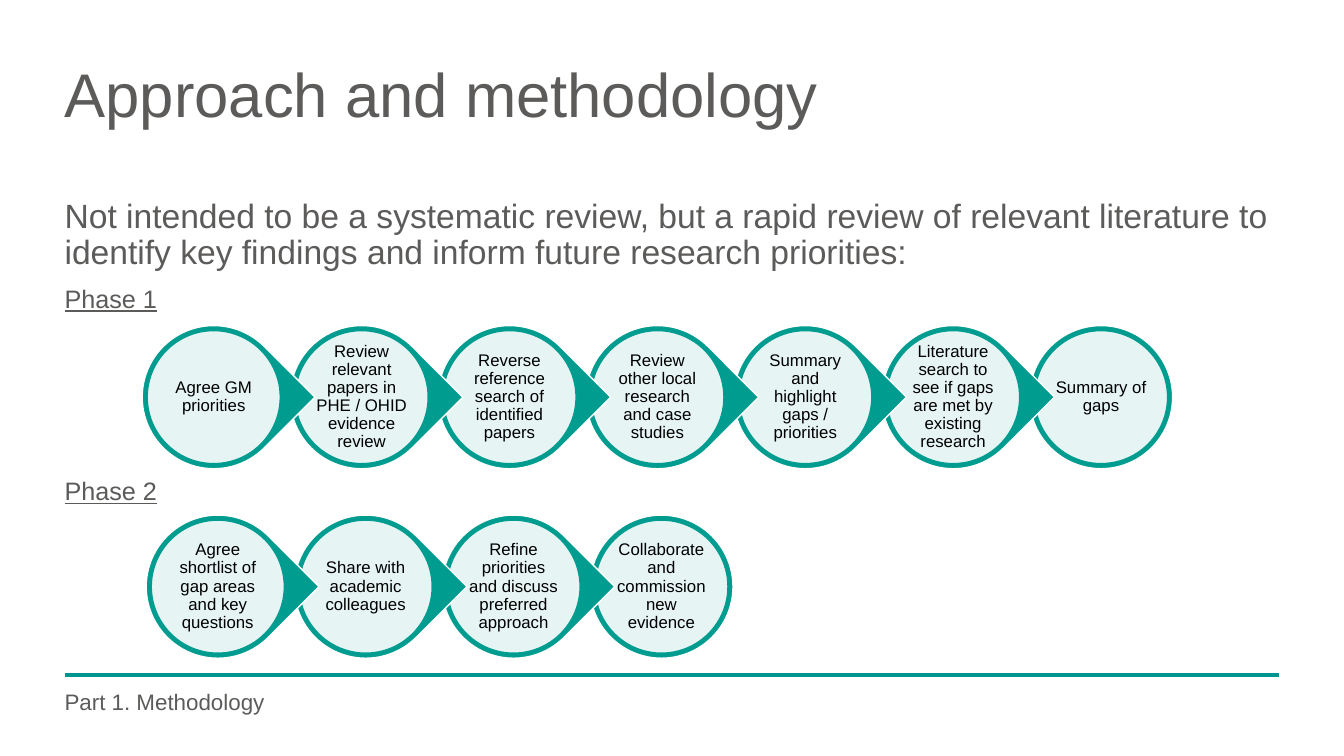
from pptx import Presentation
from pptx.dml.color import RGBColor
from pptx.enum.shapes import MSO_CONNECTOR, MSO_SHAPE
from pptx.enum.text import MSO_ANCHOR, PP_ALIGN
from pptx.oxml.ns import qn
from pptx.util import Emu, Pt
from lxml import etree

# Content
TITLE = "Approach and methodology"
INTRO = ("Not intended to be a systematic review, but a rapid review of relevant "
         "literature to identify key findings and inform future research priorities:")
FOOTER = "Part 1. Methodology"
PHASES = [
    {"label": "Phase 1", "label_top": 284, "left": 141, "top": 323, "steps": [
        "Agree GM priorities",
        "Review relevant papers in PHE / OHID evidence review",
        "Reverse reference search of identified papers",
        "Review other local research and case studies",
        "Summary and highlight gaps / priorities",
        "Literature search to see if gaps are met by existing research",
        "Summary of gaps",
    ]},
    {"label": "Phase 2", "label_top": 475, "left": 145, "top": 511, "steps": [
        "Agree shortlist of gap areas and key questions",
        "Share with academic colleagues",
        "Refine priorities and discuss preferred approach",
        "Collaborate and commission new evidence",
    ]},
]

# Style and layout, in px (100 to the inch)
PX = 9144
SLIDE_WIDTH, SLIDE_HEIGHT = 1333, 750
MARGIN, CONTENT_WIDTH = 64, 1205
RULE_TOP = 670
STEP_PITCH = 146.67
OUTER, INNER, LABEL = 142, 132, 95
FONT = "Arial"
GREY = RGBColor(0x5C, 0x5B, 0x5A)
BLACK = RGBColor(0x00, 0x00, 0x00)
WHITE = RGBColor(0xFF, 0xFF, 0xFF)
TEAL = RGBColor(0x00, 0x9C, 0x90)
RULE_TEAL = RGBColor(0x00, 0x96, 0x90)
ELLIPSE, TEARDROP = MSO_SHAPE.OVAL, MSO_SHAPE.TEAR
STRAIGHT = MSO_CONNECTOR.STRAIGHT
TOP, MIDDLE = MSO_ANCHOR.TOP, MSO_ANCHOR.MIDDLE
LEFT, CENTER = PP_ALIGN.LEFT, PP_ALIGN.CENTER


def px(value):
    return Emu(round(value * PX))


def add_text(shapes, text, left, top, width, height, size, color=GREY,
             align=LEFT, anchor=TOP, inset=0, underline=None):
    box = shapes.add_textbox(px(left), px(top), px(width), px(height))
    frame = box.text_frame
    frame.word_wrap = True
    frame.vertical_anchor = anchor
    frame.margin_left = frame.margin_right = px(inset)
    frame.margin_top = frame.margin_bottom = px(inset)
    paragraph = frame.paragraphs[0]
    paragraph.alignment = align
    paragraph.line_spacing = 0.9
    run = paragraph.add_run()
    run.text = text
    run.font.name = FONT
    run.font.size = Pt(size)
    run.font.color.rgb = color
    run.font.underline = underline


def add_disc(shapes, kind, left, top, size, fill, line):
    disc = shapes.add_shape(kind, px(left), px(top), px(size), px(size))
    disc.shadow.inherit = False
    disc.fill.solid()
    disc.fill.fore_color.rgb = fill
    disc.line.color.rgb = line
    disc.line.width = Pt(1)
    return disc


def add_step(shapes, text, left, top, is_last):
    # Teal backing: pointed towards the next step, round on the last one
    kind = ELLIPSE if is_last else TEARDROP
    backing = add_disc(shapes, kind, left, top, OUTER, TEAL, WHITE)
    if not is_last:
        backing.adjustments[0] = 1
        backing.rotation = 45

    # Pale face, 90% opaque
    offset = (OUTER - INNER) / 2
    face = add_disc(shapes, ELLIPSE, left + offset, top + offset, INNER, WHITE, TEAL)
    color = face.fill._xPr.find(qn("a:solidFill"))[0]
    etree.SubElement(color, qn("a:alpha")).set("val", "90000")

    # Wording
    offset = (OUTER - LABEL) / 2
    add_text(shapes, text, left + offset, top + offset, LABEL, LABEL, 12,
             BLACK, CENTER, MIDDLE, inset=2)


def add_phase(slide, phase):
    add_text(slide.shapes, phase["label"], MARGIN, phase["label_top"],
             CONTENT_WIDTH, 30, 18, underline=True)
    group = slide.shapes.add_group_shape()
    last = len(phase["steps"]) - 1
    # The last step lies at the back, so each point overlaps the next step
    for index in range(last, -1, -1):
        add_step(group.shapes, phase["steps"][index],
                 phase["left"] + index * STEP_PITCH, phase["top"], index == last)


def main():
    presentation = Presentation()
    presentation.slide_width = px(SLIDE_WIDTH)
    presentation.slide_height = px(SLIDE_HEIGHT)
    slide = presentation.slides.add_slide(presentation.slide_layouts[6])

    # Footer rule
    rule = slide.shapes.add_connector(
        STRAIGHT, px(MARGIN), px(RULE_TOP), px(MARGIN + CONTENT_WIDTH), px(RULE_TOP))
    rule.line.color.rgb = RULE_TEAL
    rule.line.width = Pt(3)
    etree.SubElement(rule._element.spPr, qn("a:effectLst"))

    # Title, introduction and footer
    add_text(slide.shapes, TITLE, MARGIN, 64, CONTENT_WIDTH, 101, 44)
    add_text(slide.shapes, INTRO, MARGIN, 198, CONTENT_WIDTH, 75, 24)
    add_text(slide.shapes, FOOTER, MARGIN, 686, CONTENT_WIDTH, 42, 16)

    # Process chains
    for phase in PHASES:
        add_phase(slide, phase)

    presentation.save("out.pptx")


if __name__ == "__main__":
    main()
